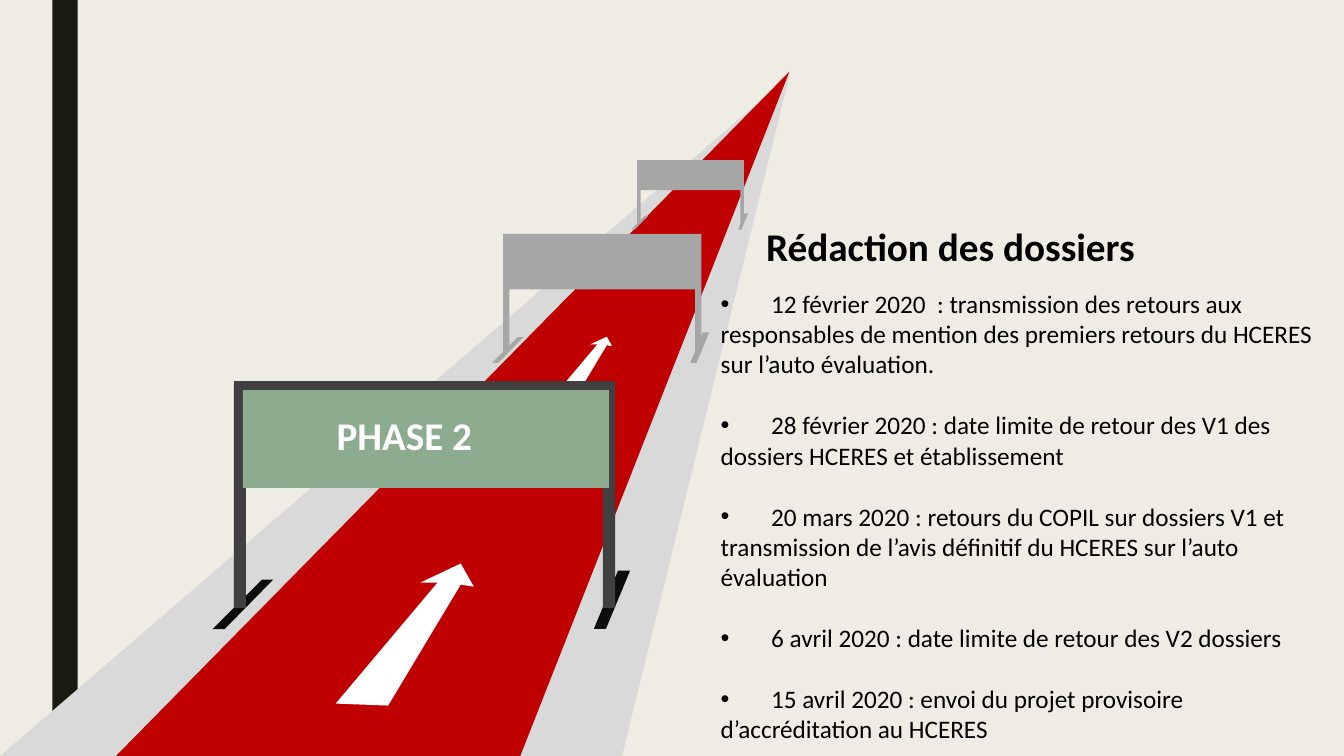
"""Build the slide of a hurdle track with the dates of phase 2."""
from lxml import etree
from pptx import Presentation
from pptx.dml.color import RGBColor
from pptx.enum import shapes
from pptx.oxml import ns
from pptx.util import Inches, Pt

TITLE = "Rédaction des dossiers"
LABEL = "PHASE 2"
DATES = [
    "12 février 2020  : transmission des retours aux responsables de mention "
    "des premiers retours du HCERES sur l’auto évaluation.",
    "28 février 2020 : date limite de retour des V1 des dossiers HCERES et établissement",
    "20 mars 2020 : retours du COPIL sur dossiers V1 et transmission de l’avis "
    "définitif du HCERES sur l’auto évaluation",
    "6 avril 2020 : date limite de retour des V2 dossiers",
    "15 avril 2020 : envoi du projet provisoire d’accréditation au HCERES",
]
THEME = dict(
    font="Calibri", head=28, body=18, page="EFEDE3", rail="191B0E",
    verge="D9D9D9", track="C00000", white="FFFFFF", black="000000",
    grey="A6A6A6", foot="0D0D0D", frame="404040", panel="8DAB8E",
)

VERGE = [(-0.01, 7.51), (7.83, 0.75), (6.17, 7.5)]
TRACK = [(7.83, 0.71), (5.16, 7.5), (1.15, 7.5)]
ARROW = [(0, 0), (1.01, -1.2), (0.84, -1.2), (1.24, -1.39),
         (1.37, -1.16), (1.24, -1.18), (0.52, 0.02)]
ARROWS = [(3.33, 6.98, 1), (5.51, 3.91, 0.41)]

FEET = [
    [(3.81, 1.88), (3.93, 1.88), (3.69, 2.46), (3.57, 2.46)],
    [(0.28, 1.97), (0.39, 1.97), (-0.09, 2.46), (-0.21, 2.46)],
]
FRAME = [(0, 0), (3.78, 0), (3.78, 2.25), (3.66, 2.25),
         (3.66, 0.12), (0.12, 0.12), (0.12, 2.25), (0, 2.25)]
PANEL = [0.09, 0.09, 3.63, 0.97]
HURDLES = [
    (4.99, 2.32, 0.52, ("grey", "grey", "grey")),
    (6.32, 1.59, 0.28, ("grey", "grey", "grey")),
    (2.32, 3.78, 1, ("foot", "frame", "panel")),
]


def color(name):
    return RGBColor.from_string(THEME[name])


def paint(shape, fill):
    shape.shadow.inherit = False
    shape.fill.solid()
    shape.fill.fore_color.rgb = color(fill)
    shape.line.fill.background()


def block(slide, box, fill):
    kind = shapes.MSO_SHAPE.RECTANGLE
    paint(slide.shapes.add_shape(kind, *map(Inches, box)), fill)


def outline(slide, points, fill, left=0, top=0, scale=1):
    spots = [(Inches(left + x * scale), Inches(top + y * scale)) for x, y in points]
    form = slide.shapes.build_freeform(*spots[0])
    form.add_line_segments(spots[1:], close=True)
    paint(form.convert_to_shape(), fill)


def hurdle(slide, left, top, scale, fills):
    foot, frame, panel = fills
    for points in FEET:
        outline(slide, points, foot, left, top, scale)
    outline(slide, FRAME, frame, left, top, scale)
    x, y, wide, high = (n * scale for n in PANEL)
    block(slide, (left + x, top + y, wide, high), panel)


def bullet(para):
    props = para._p.get_or_add_pPr()
    props.set("marL", "0")
    props.set("indent", "0")
    etree.SubElement(props, ns.qn("a:buFont")).set("typeface", "Arial")
    etree.SubElement(props, ns.qn("a:buChar")).set("char", "•")
    tabs = etree.SubElement(props, ns.qn("a:tabLst"))
    tab = etree.SubElement(tabs, ns.qn("a:tab"))
    tab.set("pos", str(Inches(0.5)))
    tab.set("algn", "l")


def write(slide, box, lines, size, ink, bold=False, wrap=False, listed=False):
    frame = slide.shapes.add_textbox(*map(Inches, box)).text_frame
    frame.word_wrap = wrap
    style = dict(name=THEME["font"], size=Pt(THEME[size]), bold=bold)
    for i, line in enumerate(lines):
        para = frame.add_paragraph() if i else frame.paragraphs[0]
        if i:
            para.space_before = Pt(22)
        if listed:
            bullet(para)
        run = para.add_run()
        run.text = "\t" + line if listed else line
        for key, value in style.items():
            setattr(run.font, key, value)
        run.font.color.rgb = color(ink)


def main():
    deck = Presentation()
    deck.slide_width, deck.slide_height = Inches(13.33), Inches(7.5)
    slide = deck.slides.add_slide(deck.slide_layouts[6])
    slide.background.fill.solid()
    slide.background.fill.fore_color.rgb = color("page")
    block(slide, (0.52, 0, 0.25, 7.5), "rail")
    outline(slide, VERGE, "verge")
    outline(slide, TRACK, "track")
    for place in ARROWS:
        outline(slide, ARROW, "white", *place)
    for item in HURDLES:
        hurdle(slide, *item)
    write(slide, (3.24, 4.03, 1.56, 0.57), [LABEL], "head", "white", bold=True)
    write(slide, (7.05, 2.81, 6.32, 4.64), DATES, "body", "black", wrap=True, listed=True)
    write(slide, (7.5, 2.16, 3.9, 0.57), [TITLE], "head", "black", bold=True)
    deck.save("out.pptx")


if __name__ == "__main__":
    main()
